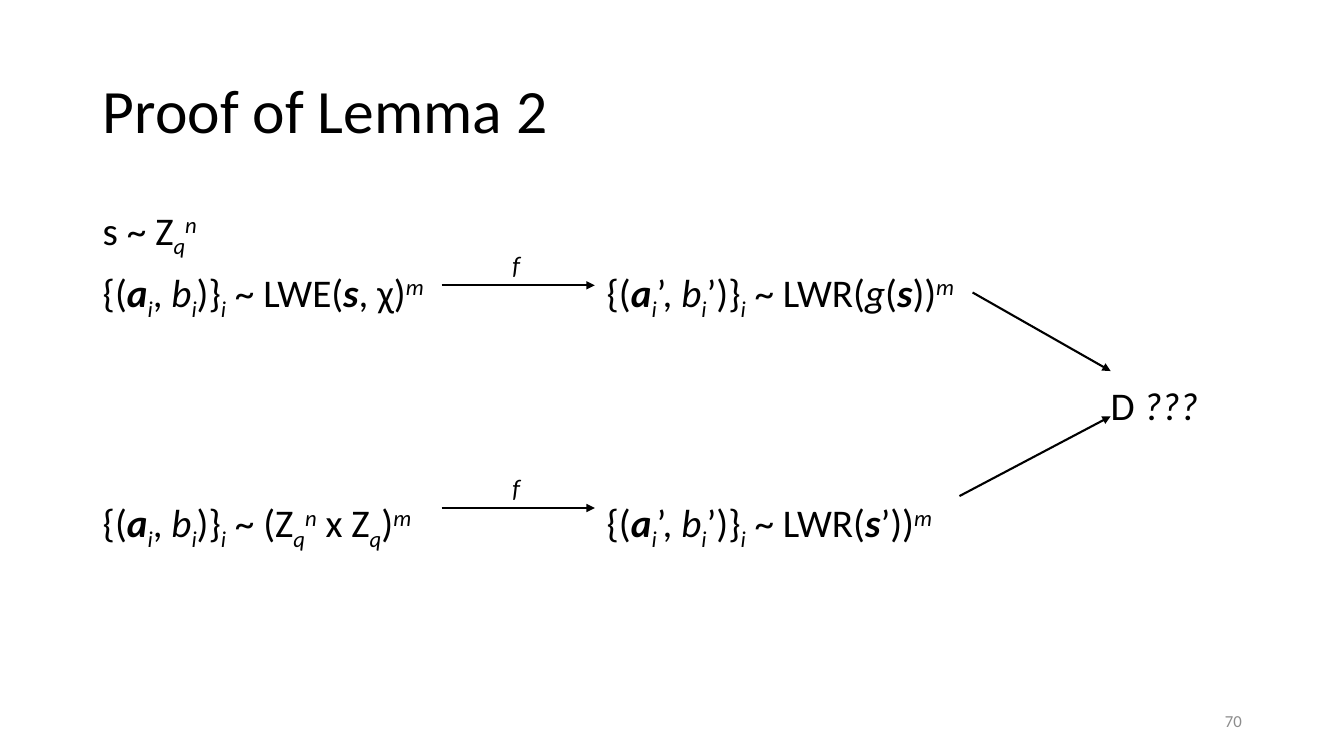
from pptx import Presentation
from pptx.dml.color import RGBColor
from pptx.enum.shapes import MSO_CONNECTOR
from pptx.enum.text import MSO_ANCHOR, MSO_AUTO_SIZE, PP_ALIGN
from pptx.oxml.ns import qn
from pptx.util import Cm, Pt
from lxml.etree import SubElement

FONT = "Calibri"
BLACK, GREY = "000000", "8C8C8C"
TITLE = "Proof of Lemma 2"
PAGE = "70"

SUB_I = ("i", "sub")
POWER_M = ("m", "super")
VECTOR_S = ("s", "vector")
Z_Q_N = [("Z", ""), ("q", "sub"), ("n", "super")]
SAMPLES = [("{(", ""), ("a", "vector"), SUB_I, (", ", ""), ("b", "italic"),
           SUB_I, (")}", ""), SUB_I]
MAPPED = [("{(", ""), ("a", "vector"), SUB_I, ("’, ", ""), ("b", "italic"),
          SUB_I, ("’)}", ""), SUB_I, (" ~ LWR(", "")]

LINES = [
    (0, [("s ~ ", "")] + Z_Q_N),
    (10, SAMPLES + [(" ~ LWE(", ""), VECTOR_S, (", χ)", ""), POWER_M, ("\t", "")]
     + MAPPED + [("g", "italic"), ("(", ""), VECTOR_S, ("))", ""), POWER_M]),
    (50, [("\t\tD ", ""), ("???", "italic")]),
    (50, SAMPLES + [(" ~ (", "")] + Z_Q_N
     + [(" x Z", ""), ("q", "sub"), (")", ""), POWER_M, ("\t", "")]
     + MAPPED + [VECTOR_S, ("’))", ""), POWER_M]),
]
STYLES = {
    "": {},
    "italic": {"italic": True},
    "vector": {"bold": True, "italic": True},
    "sub": {"italic": True, "baseline": -25},
    "super": {"italic": True, "baseline": 30},
}

LEFT, WIDTH = 2.34, 29.21
TAB_STOPS = [12.7, 25.4]
MAP_ROWS = [7.19, 12.8]
MAP_X = (11.13, 14.99)
LABEL_W, LABEL_H = 0.79, 1.02
ARROWS = [(24.51, 7.37, 27.99, 9.35), (24.18, 12.5, 27.99, 10.49)]
ARROWS += [(MAP_X[0], y, MAP_X[1], y) for y in MAP_ROWS]


def rgb(color):
    return RGBColor.from_string(color)


def add_text(p, text, size=28, color=BLACK, bold=False, italic=False, baseline=0):
    r = p.add_run()
    r.text = text
    r.font.name, r.font.size = FONT, Pt(size)
    r.font.bold, r.font.italic = bold, italic
    r.font.color.rgb = rgb(color)
    if baseline:
        r._r.get_or_add_rPr().set("baseline", str(baseline * 1000))


def add_box(s, x, y, w, h):
    tf = s.shapes.add_textbox(Cm(x), Cm(y), Cm(w), Cm(h)).text_frame
    tf.word_wrap = True
    return tf


def add_arrow(s, x1, y1, x2, y2):
    sp = s.shapes.add_connector(MSO_CONNECTOR.STRAIGHT, Cm(x1), Cm(y1), Cm(x2), Cm(y2))
    sp.line.color.rgb = rgb(BLACK)
    sp.line.width = Pt(1.5)
    SubElement(sp.line._get_or_add_ln(), qn("a:tailEnd"), type="triangle")
    SubElement(sp._element.spPr, qn("a:effectLst"))


def add_tabs(p):
    tabs = SubElement(p._p.get_or_add_pPr(), qn("a:tabLst"))
    for stop in TAB_STOPS:
        SubElement(tabs, qn("a:tab"), pos=str(Cm(stop)), algn="l")


def main():
    prs = Presentation()
    prs.slide_width, prs.slide_height = Cm(33.87), Cm(19.05)
    s = prs.slides.add_slide(prs.slide_layouts[5])

    title = s.shapes.title
    title.left, title.top, title.width, title.height = Cm(LEFT), Cm(1.02), Cm(WIDTH), Cm(3.68)
    tf = title.text_frame
    tf.auto_size, tf.vertical_anchor = MSO_AUTO_SIZE.NONE, MSO_ANCHOR.MIDDLE
    p = tf.paragraphs[0]
    p.alignment, p.line_spacing = PP_ALIGN.LEFT, 0.9
    add_text(p, TITLE, size=44)

    tf = add_box(s, LEFT, 5.08, WIDTH, 12.09)
    for i, (gap, runs) in enumerate(LINES):
        p = tf.add_paragraph() if i else tf.paragraphs[0]
        p.line_spacing, p.space_before = 0.9, Pt(gap)
        add_tabs(p)
        for text, style in runs:
            add_text(p, text, **STYLES[style])

    tf = add_box(s, 23.93, 17.65, 7.62, 1.02)
    tf.vertical_anchor = MSO_ANCHOR.MIDDLE
    tf.paragraphs[0].alignment = PP_ALIGN.RIGHT
    add_text(tf.paragraphs[0], PAGE, size=12, color=GREY)

    for ends in ARROWS:
        add_arrow(s, *ends)
    for y in MAP_ROWS:
        tf = add_box(s, sum(MAP_X) / 2 - LABEL_W / 2, y - LABEL_H, LABEL_W, LABEL_H)
        add_text(tf.paragraphs[0], "f", size=18, italic=True)

    prs.save("out.pptx")


if __name__ == "__main__":
    main()
